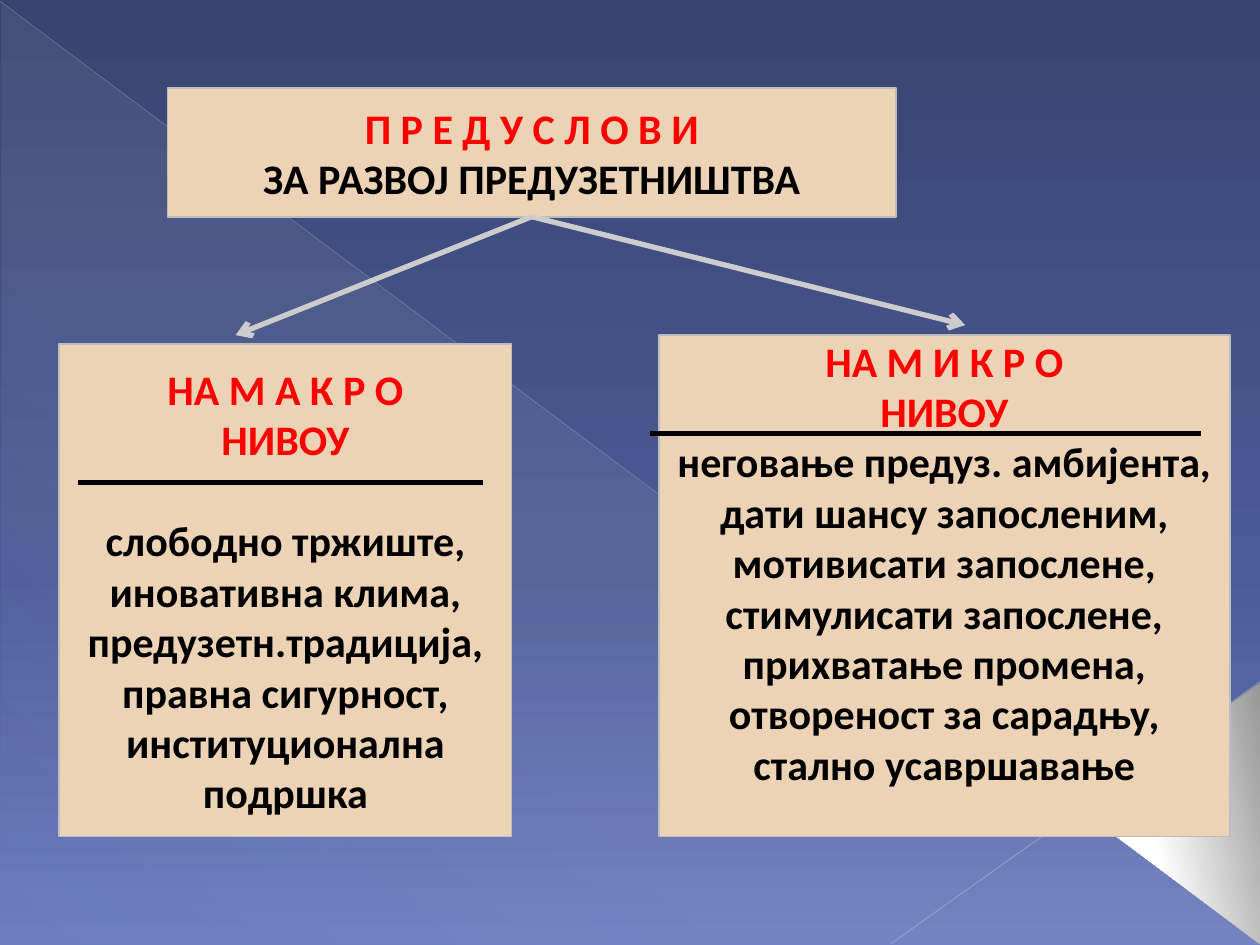
from lxml import etree
from pptx import Presentation
from pptx.dml.color import RGBColor
from pptx.enum.shapes import MSO_CONNECTOR, MSO_SHAPE
from pptx.enum.text import MSO_ANCHOR, PP_ALIGN
from pptx.oxml.ns import qn
from pptx.util import Inches, Pt

RECT = MSO_SHAPE.RECTANGLE
PROCESS = MSO_SHAPE.FLOWCHART_PROCESS
RIGHT_TRIANGLE = MSO_SHAPE.RIGHT_TRIANGLE
TRIANGLE = MSO_SHAPE.ISOSCELES_TRIANGLE
STRAIGHT = MSO_CONNECTOR.STRAIGHT
TOP, MIDDLE = MSO_ANCHOR.TOP, MSO_ANCHOR.MIDDLE
CENTER = PP_ALIGN.CENTER

RED = RGBColor(0xFF, 0x00, 0x00)
BLACK = RGBColor(0x00, 0x00, 0x00)
SAND = RGBColor(0xED, 0xD3, 0xB6)
BORDER = RGBColor(0xBD, 0xBD, 0xBD)
ARROW = RGBColor(0xCC, 0xCC, 0xCC)
NAVY = RGBColor(0x39, 0x44, 0x71)
INDIGO = RGBColor(0x4B, 0x5B, 0x97)
PERIWINKLE = RGBColor(0x6C, 0x7C, 0xC0)
MIST = RGBColor(0xC5, 0xD1, 0xD7)
LONG_EDGE = RGBColor(0xBA, 0xBE, 0xCD)
SHORT_EDGE = RGBColor(0xC2, 0xC5, 0xD2)
GREY = RGBColor(0x97, 0x97, 0x97)
WHITE = RGBColor(0xFF, 0xFF, 0xFF)

FONT = {"name": "Calibri", "size": Pt(24), "bold": True}

TITLE = [("П Р Е Д У С Л О В И", RED), ("ЗА РАЗВОЈ ПРЕДУЗЕТНИШТВА", BLACK)]
MACRO_HEAD = ["НА М А К Р О", "НИВОУ"]
MACRO_ITEMS = [
    "слободно тржиште,",
    "иновативна клима,",
    "предузетн.традиција,",
    "правна сигурност,",
    "институционална подршка",
]
MICRO_HEAD = ["НА М И К Р О", "НИВОУ"]
MICRO_ITEMS = [
    "неговање предуз. амбијента,",
    "дати шансу запосленим,",
    "мотивисати запослене,",
    "стимулисати запослене,",
    "прихватање промена,",
    "отвореност за сарадњу,",
    "стално усавршавање",
]


def set_alpha(color_element, percent):
    alpha = etree.SubElement(color_element, qn("a:alpha"))
    alpha.set("val", str(percent * 1000))


def set_gradient(fill, element, stops, angle):
    fill.gradient()
    fill.gradient_angle = 360 - angle
    stop_list = element.find(".//" + qn("a:gsLst"))
    for old in list(stop_list):
        stop_list.remove(old)
    for position, color, opacity in stops:
        stop = etree.SubElement(stop_list, qn("a:gs"), pos=str(position * 1000))
        color_element = etree.SubElement(stop, qn("a:srgbClr"), val=str(color))
        if opacity < 100:
            set_alpha(color_element, opacity)


def add_shape(s, kind, box):
    shape = s.shapes.add_shape(kind, *map(Inches, box))
    shape.shadow.inherit = False
    return shape


def add_gradient_shape(s, kind, box, stops, angle):
    shape = add_shape(s, kind, box)
    shape.line.fill.background()
    set_gradient(shape.fill, shape.element, stops, angle)
    return shape


def add_line(s, start, end, color, width, opacity=100, arrow=False):
    line = s.shapes.add_connector(STRAIGHT, *map(Inches, start + end))
    line.line.color.rgb = color
    line.line.width = Pt(width)
    properties = line.element.spPr
    etree.SubElement(properties, qn("a:effectLst"))
    if opacity < 100:
        set_alpha(properties.find(".//" + qn("a:srgbClr")), opacity)
    if arrow:
        etree.SubElement(properties.find(qn("a:ln")), qn("a:tailEnd"), type="arrow")


def add_box(s, kind, box, lines, anchor=MIDDLE):
    shape = add_shape(s, kind, box)
    shape.fill.solid()
    shape.fill.fore_color.rgb = SAND
    shape.line.color.rgb = BORDER
    shape.line.width = Pt(1)
    tf = shape.text_frame
    tf.word_wrap = True
    tf.vertical_anchor = anchor
    for i, (text, color) in enumerate(lines):
        p = tf.add_paragraph() if i else tf.paragraphs[0]
        p.alignment = CENTER
        r = p.add_run()
        r.text = text
        r.font.color.rgb = color
        for name, value in FONT.items():
            setattr(r.font, name, value)
    return tf


def level_lines(head, items):
    return [(text, RED) for text in head] + [(text, BLACK) for text in items]


def add_backdrop(s):
    set_gradient(s.background.fill, s.element,
                 [(0, NAVY, 100), (60, INDIGO, 100), (100, PERIWINKLE, 100)], 90)
    add_gradient_shape(s, RIGHT_TRIANGLE, (0.01, 0.02, 9.99, 7.48),
                       [(0, MIST, 10), (70, MIST, 8), (100, MIST, 1)], 133)
    add_line(s, (0, 0.01), (9.99, 7.49), LONG_EDGE, 0.39, opacity=35)
    add_line(s, (10, 5.41), (7.07, 7.49), SHORT_EDGE, 0.47, opacity=45)
    corner = add_gradient_shape(s, TRIANGLE, (8.26, 5.75, 2.07, 1.41),
                                [(0, GREY, 100), (60, WHITE, 100), (100, WHITE, 100)], 258)
    corner.rotation = 270
    corner.adjustments[0] = 0.51


def main():
    prs = Presentation()
    prs.slide_width, prs.slide_height = Inches(10), Inches(7.5)
    s = prs.slides.add_slide(prs.slide_layouts[6])
    add_backdrop(s)

    add_box(s, RECT, (1.33, 0.7, 5.78, 1.02), TITLE)
    macro = add_box(s, PROCESS, (0.47, 2.73, 3.59, 3.91),
                    level_lines(MACRO_HEAD, MACRO_ITEMS))
    macro.paragraphs[len(MACRO_HEAD)].space_before = Pt(29)
    micro = add_box(s, PROCESS, (5.23, 2.66, 4.53, 3.98),
                    level_lines(MICRO_HEAD, MICRO_ITEMS), TOP)
    micro.margin_top = 0

    for left, right, y in ((0.62, 3.83, 3.83), (5.16, 9.53, 3.44)):
        add_line(s, (left, y), (right, y), BLACK, 3)
    for tip in ((1.87, 2.66), (7.66, 2.58)):
        add_line(s, (4.22, 1.72), tip, ARROW, 3, arrow=True)

    prs.save("out.pptx")


if __name__ == "__main__":
    main()
